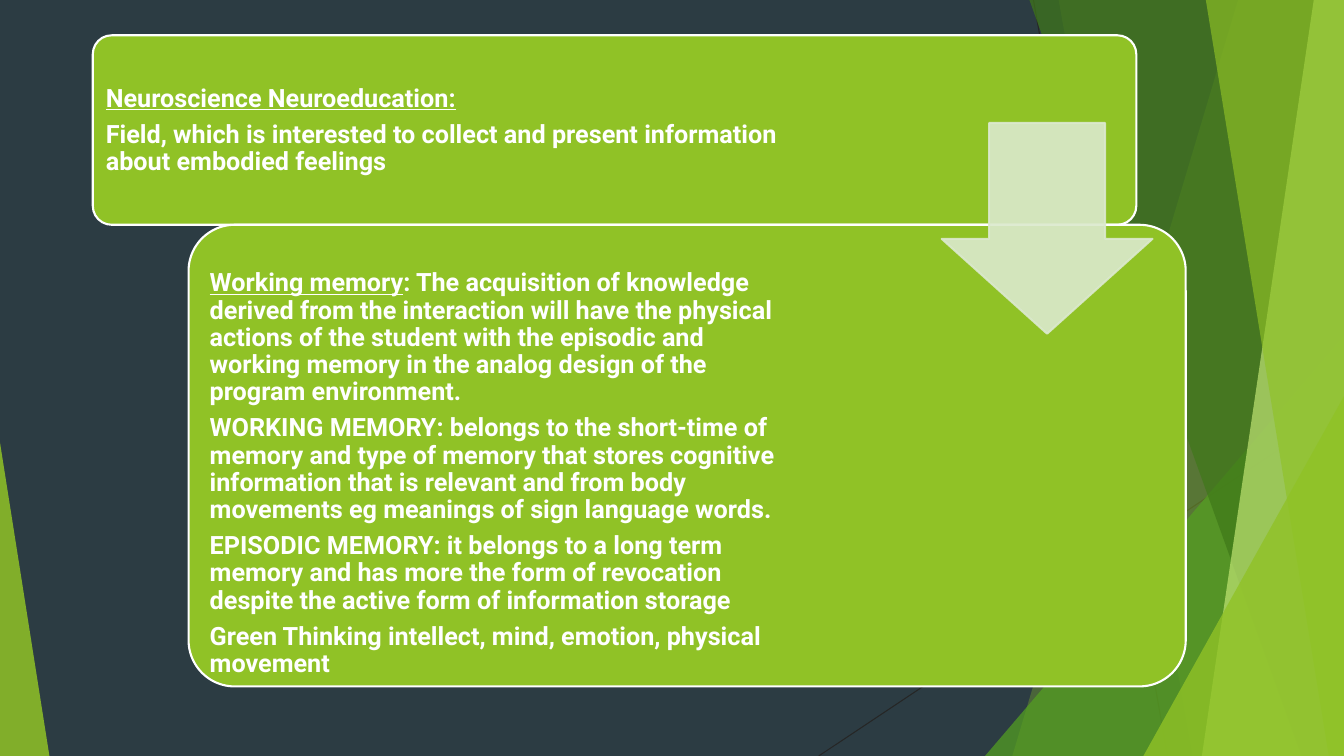
from lxml.etree import SubElement
from pptx import Presentation
from pptx.dml.color import RGBColor
from pptx.enum.shapes import MSO_CONNECTOR, MSO_SHAPE as Shape
from pptx.enum.text import MSO_ANCHOR as Anchor
from pptx.oxml.ns import qn
from pptx.util import Inches, Pt

WIDTH, HEIGHT = 13.33, 7.5
GREEN, WHITE, PALE, DARK = "90C226", "FFFFFF", "DBE9CD", "2C3C43"


def color(value):
    return RGBColor.from_string(value)


def paint(fill, value, opacity=100):
    """Set a solid fill, with its opacity in percent."""
    fill.solid()
    fill.fore_color.rgb = color(value)
    if opacity < 100:
        for tone in fill._xPr.iter(qn("a:srgbClr")):
            SubElement(tone, qn("a:alpha"), val=str(opacity * 1000))


def finish(shape, fill, opacity=100, line=None):
    shape.shadow.inherit = False
    paint(shape.fill, fill, opacity)
    if line:
        shape.line.width = Pt(1.5)
        paint(shape.line.fill, line, opacity)
    else:
        shape.line.fill.background()


def add_preset(page, kind, place, adjust, fill, **look):
    shape = page.shapes.add_shape(kind, *map(Inches, place))
    for index, value in enumerate(adjust):
        shape.adjustments[index] = value
    finish(shape, fill, **look)


def add_facet(page, top_x, bottom_x, fill, opacity):
    """Band from a slanted left side to the right edge of the slide."""
    corners = [(WIDTH, 0), (WIDTH, HEIGHT), (bottom_x, HEIGHT)]
    builder = page.shapes.build_freeform(Inches(top_x), 0)
    builder.add_line_segments([(Inches(x), Inches(y)) for x, y in corners])
    finish(builder.convert_to_shape(), fill, opacity)


def add_hairline(page, *ends):
    line = page.shapes.add_connector(MSO_CONNECTOR.STRAIGHT, *map(Inches, ends))
    line.line.width = Pt(0.75)
    line.line.color.rgb = color("262626")
    SubElement(line._element.spPr, qn("a:effectLst"))


def add_span(para, text, underline=False):
    span = para.add_run()
    span.text = text
    font = span.font
    font.name, font.size, font.bold = "Roboto", Pt(18), True
    font.underline = underline
    font.color.rgb = color(WHITE)


def add_text(page, place, paragraphs, anchor=Anchor.MIDDLE):
    """Each paragraph is a pair: underlined lead, plain rest."""
    frame = page.shapes.add_textbox(*map(Inches, place)).text_frame
    frame.word_wrap = True
    frame.vertical_anchor = anchor
    frame.margin_left = frame.margin_right = Inches(0.07)
    frame.margin_top = frame.margin_bottom = Inches(0.07)
    for index, (lead, rest) in enumerate(paragraphs):
        para = frame.add_paragraph() if index else frame.paragraphs[0]
        para.line_spacing = 0.9
        para.space_after = Pt(6.3)
        if lead:
            add_span(para, lead, underline=True)
        if rest:
            add_span(para, rest)


def add_backdrop(page):
    paint(page.background.fill, DARK)
    add_hairline(page, 10.25, 0, 11.58, HEIGHT)
    add_hairline(page, WIDTH, 4.03, 8.12, HEIGHT)
    add_facet(page, 12.28, 10.04, GREEN, 30)
    add_facet(page, 10.5, 11.83, GREEN, 20)
    add_preset(page, Shape.ISOSCELES_TRIANGLE, (9.77, 3.33, 3.56, 4.17), [1],
               "54A021", opacity=72)
    add_facet(page, 10.21, 12.91, "3F7819", 70)
    add_facet(page, 13.03, 11.92, "C0E474", 70)
    add_facet(page, 11.96, 13.18, GREEN, 65)
    add_preset(page, Shape.ISOSCELES_TRIANGLE, (11.34, 3.93, 1.99, 3.57), [1],
               GREEN, opacity=80)
    add_preset(page, Shape.ISOSCELES_TRIANGLE, (0, 4.39, 0.49, 3.11), [0],
               GREEN, opacity=85)


def main():
    deck = Presentation()
    deck.slide_width, deck.slide_height = Inches(WIDTH), Inches(HEIGHT)
    page = deck.slides.add_slide(deck.slide_layouts[6])
    add_backdrop(page)

    # Upper card
    add_preset(page, Shape.ROUNDED_RECTANGLE, (0.92, 0.35, 10.35, 1.88), [0.1],
               GREEN, line=WHITE)
    add_text(page, (0.98, 0.41, 6.96, 1.77), [
        ("Neuroscience Neuroeducation:", ""),
        ("", "Field, which is interested to collect and present information "
             "about embodied feelings"),
    ])

    # Lower card
    add_preset(page, Shape.ROUNDED_RECTANGLE, (1.87, 2.23, 9.89, 4.58), [0.1],
               GREEN, line=WHITE)
    add_text(page, (2.01, 2.61, 5.78, 4.15), [
        ("Working memory",
         ": The acquisition of knowledge derived from the interaction will have "
         "the physical actions of the student with the episodic and working "
         "memory in the analog design of the program environment."),
        ("", "WORKING MEMORY: belongs to the short-time of memory and type of "
             "memory that stores cognitive information that is relevant and from "
             "body movements eg meanings of sign language words."),
        ("", "EPISODIC MEMORY: it belongs to a long term memory and has more the "
             "form of revocation despite the active form of information storage"),
        ("", "Green Thinking intellect, mind, emotion, physical movement"),
    ], anchor=Anchor.TOP)

    # Arrow from the upper card to the lower one
    add_preset(page, Shape.DOWN_ARROW, (9.34, 1.22, 2.09, 2.09), [0.55, 0.45],
               PALE, opacity=90, line=PALE)
    deck.save("out.pptx")


if __name__ == "__main__":
    main()
